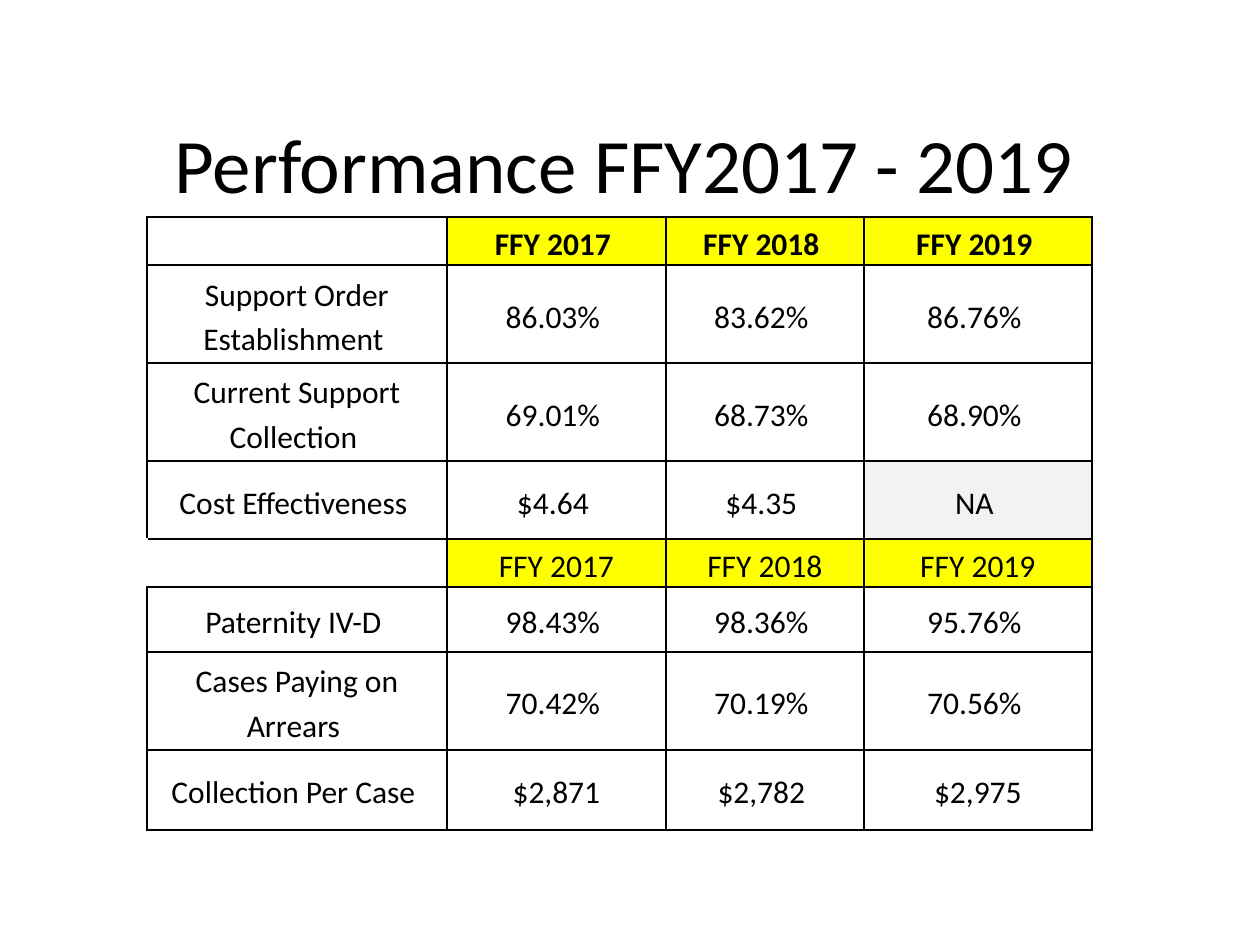
from dataclasses import dataclass

from lxml import etree
from pptx import Presentation
from pptx.dml.color import RGBColor
from pptx.enum.text import MSO_ANCHOR, PP_ALIGN
from pptx.oxml.ns import qn
from pptx.util import Pt

CENTER = PP_ALIGN.CENTER
MIDDLE = MSO_ANCHOR.MIDDLE
EMU_PER_PX = 914400 / 126
TITLE_ONLY_LAYOUT = 5


@dataclass(frozen=True)
class Theme:
    font: str = "Calibri"
    title_size: int = 44
    cell_size: int = 18
    line_spacing: float = 1.15
    border_width: int = 1
    ink: str = "000000"
    paper: str = "FFFFFF"
    year_fill: str = "FFFF00"
    missing_fill: str = "F2F2F2"


THEME = Theme()

TITLE = "Performance FFY2017 - 2019"
MEASURES = [
    ("", "FFY 2017 ", "FFY 2018 ", "FFY 2019 "),
    ("Support Order Establishment ", "86.03% ", "83.62% ", "86.76% "),
    ("Current Support Collection ", "69.01% ", "68.73% ", "68.90% "),
    ("Cost Effectiveness ", "$4.64 ", "$4.35 ", "NA "),
    ("", "FFY 2017", "FFY 2018", "FFY 2019"),
    ("Paternity IV-D ", "98.43% ", "98.36% ", "95.76% "),
    ("Cases Paying on Arrears ", "70.42% ", "70.19% ", "70.56% "),
    ("Collection Per Case ", "$2,871", "$2,782 ", "$2,975"),
]
SECOND_YEARS_ROW = 4

SLIDE_SIZE = (1260, 945)
TITLE_BOX = (157, 105, 935, 116)
TABLE_ORIGIN = (147, 217)
COLUMN_WIDTHS = (300, 219, 198, 228)
ROW_HEIGHTS = (48, 98, 98, 78, 48, 65, 98, 80)


def px(length):
    return round(length * EMU_PER_PX)


def format_text(frame, size, bold=False):
    frame.vertical_anchor = MIDDLE
    paragraph = frame.paragraphs[0]
    paragraph.alignment = CENTER
    for run in paragraph.runs:
        run.font.name = THEME.font
        run.font.size = Pt(size)
        run.font.bold = bold
        run.font.color.rgb = RGBColor.from_string(THEME.ink)


def set_borders(cell, left_color):
    """Draw all four cell edges; the schema wants them ahead of the fill."""
    properties = cell._tc.get_or_add_tcPr()
    edges = {"a:lnL": left_color, "a:lnR": THEME.ink, "a:lnT": THEME.ink, "a:lnB": THEME.ink}
    for position, (edge, color) in enumerate(edges.items()):
        line = etree.Element(qn(edge), w=str(Pt(THEME.border_width)))
        fill = etree.SubElement(line, qn("a:solidFill"))
        etree.SubElement(fill, qn("a:srgbClr"), val=color)
        properties.insert(position, line)


def cell_fill(text):
    if text.startswith("FFY"):
        return THEME.year_fill
    return THEME.missing_fill if text.strip() == "NA" else THEME.paper


def add_title(slide):
    title = slide.shapes.title
    title.left, title.top, title.width, title.height = map(px, TITLE_BOX)
    title.text_frame.text = TITLE
    format_text(title.text_frame, THEME.title_size)


def fill_cell(cell, text, row):
    cell.text_frame.text = text
    format_text(cell.text_frame, THEME.cell_size, bold=row == 0)
    cell.vertical_anchor = MIDDLE
    cell.text_frame.paragraphs[0].line_spacing = THEME.line_spacing
    cell.margin_left = cell.margin_right = cell.margin_top = px(1)
    cell.margin_bottom = 0
    cell.fill.solid()
    cell.fill.fore_color.rgb = RGBColor.from_string(cell_fill(text))
    open_left = row == SECOND_YEARS_ROW and not text
    set_borders(cell, THEME.paper if open_left else THEME.ink)


def add_performance_table(slide):
    extent = (sum(COLUMN_WIDTHS), sum(ROW_HEIGHTS))
    table = slide.shapes.add_table(
        len(MEASURES), len(COLUMN_WIDTHS), *map(px, TABLE_ORIGIN + extent)
    ).table
    table.first_row = table.horz_banding = False
    for column, width in zip(table.columns, COLUMN_WIDTHS):
        column.width = px(width)
    for row, height in zip(table.rows, ROW_HEIGHTS):
        row.height = px(height)
    for row, measure in enumerate(MEASURES):
        for column, text in enumerate(measure):
            fill_cell(table.cell(row, column), text, row)


def main():
    presentation = Presentation()
    presentation.slide_width, presentation.slide_height = map(px, SLIDE_SIZE)
    slide = presentation.slides.add_slide(presentation.slide_layouts[TITLE_ONLY_LAYOUT])
    add_title(slide)
    add_performance_table(slide)
    presentation.save("out.pptx")


if __name__ == "__main__":
    main()
